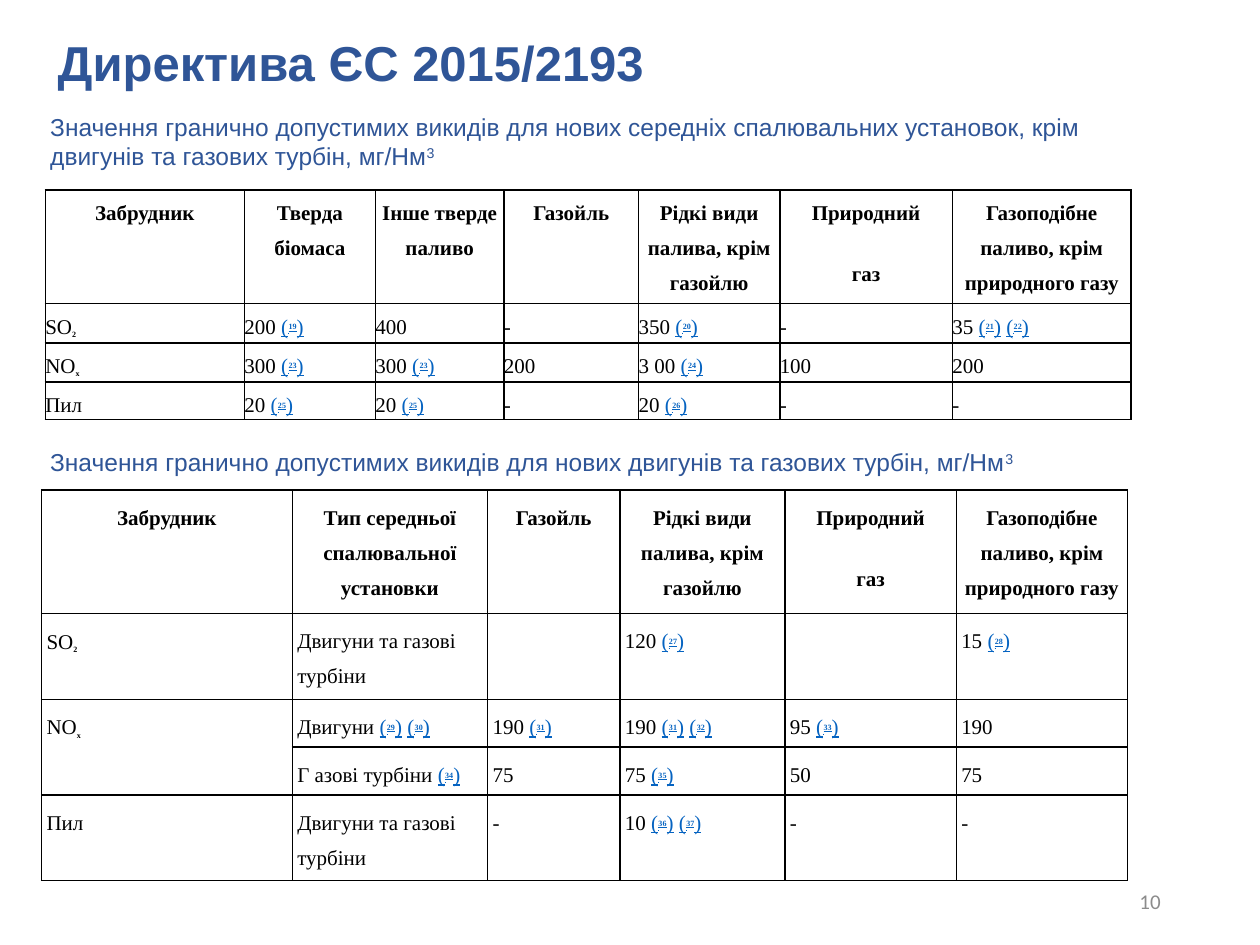
import pptx
import pptx.util
import pptx.dml.color
import pptx.enum.text
import pptx.oxml
import pptx.oxml.ns
from dataclasses import dataclass

Inches = pptx.util.Inches
Pt = pptx.util.Pt
Align = pptx.enum.text.PP_ALIGN
Anchor = pptx.enum.text.MSO_ANCHOR
NBSP = chr(160)


@dataclass(frozen=True)
class Theme:
    blue: str = "2F5597"
    link: str = "0563C1"
    ink: str = "000000"
    gray: str = "8C8C8C"
    sans: str = "Arial"
    serif: str = "Times New Roman"
    plain: str = "Calibri"
    title: int = 28
    lead: int = 14
    body: int = 12
    mark: int = 8
    dash: int = 1
    rule: int = 1


THEME = Theme()

# Cell text: "_" starts a subscript, "|" a footnote number, "\n" a paragraph
NEW = [
    ["Забрудник", "Тверда біомаса", "Інше тверде паливо", "Газойль",
     "Рідкі види палива, крім газойлю", "Природний\nгаз",
     "Газоподібне паливо, крім природного газу"],
    ["SO_2", "200|19", "400", "-", "350|20", "-", "35|21|22"],
    ["NO_x", "300|23", "300|23", "200", "3 00|24", "100", "200"],
    ["Пил", "20|25", "20|25", "-", "20|26", "-", "-"],
]
MOTORS = [
    ["Забрудник", "Тип середньої спалювальної установки", "Газойль",
     "Рідкі види палива, крім газойлю", "Природний\nгаз",
     "Газоподібне паливо, крім природного газу"],
    ["SO_2", "Двигуни та газові турбіни", "", "120|27", "", "15|28"],
    ["NO_x", "Двигуни|29|30", "190|31", "190|31|32", "95|33", "190"],
    ["", "Г азові турбіни|34", "75", "75|35", "50", "75"],
    ["Пил", "Двигуни та газові турбіни", "-", "10|36|37", "-", "-"],
]


def color(code):
    return pptx.dml.color.RGBColor.from_string(code)


def style(para, face, size, code, bold=False):
    font = para.font
    font.name, font.size, font.bold = face, Pt(size), bold
    font.color.rgb = color(code)


def add_run(para, text, size=None, bold=None, base=0, link=False):
    run = para.add_run()
    run.text = text
    if size:
        run.font.size = Pt(size)
    if bold:
        run.font.bold = True
    if link:
        run.font.underline = True
        run.font.color.rgb = color(THEME.link)
    if base:
        run._r.get_or_add_rPr().set("baseline", str(base * 1000))


def add_text(slide, box, text, face, size, code, bold=False, power="",
             align=Align.LEFT, anchor=Anchor.TOP):
    frame = slide.shapes.add_textbox(*map(Inches, box)).text_frame
    frame.word_wrap = True
    frame.vertical_anchor = anchor
    para = frame.paragraphs[0]
    para.alignment = align
    style(para, face, size, code, bold)
    add_run(para, text)
    if power:
        add_run(para, power, base=30)
    return para


def add_rules(cell):
    """Draw the four borders, which come before the fill in the cell."""
    props = cell._tc.get_or_add_tcPr()
    for spot, side in enumerate("LRTB"):
        props.insert(spot, pptx.oxml.parse_xml(
            f'<a:ln{side} {pptx.oxml.ns.nsdecls("a")} w="{Pt(THEME.rule)}">'
            f'<a:solidFill><a:srgbClr val="{THEME.ink}"/></a:solidFill>'
            f'</a:ln{side}>'))


def fill_para(para, text, head):
    style(para, THEME.serif, THEME.body, THEME.ink, head)
    para.alignment = Align.CENTER if head else Align.LEFT
    para.line_spacing = 1.5
    para.space_before = para.space_after = Pt(7.5)
    value, *notes = text.split("|")
    name, _, sub = value.partition("_")
    if name:
        add_run(para, name + (NBSP if notes else ""))
    if sub:
        add_run(para, sub, THEME.mark, True, -25)
    for count, note in enumerate(notes):
        if count:
            add_run(para, NBSP)
        add_run(para, "(", link=True)
        add_run(para, "-", THEME.dash, True, 30, True)
        add_run(para, note, THEME.mark, True, 30, True)
        add_run(para, ")", link=True)


def add_grid(slide, left, top, cols, rows, data, inset):
    box = (left, top, sum(cols), sum(rows))
    table = slide.shapes.add_table(
        len(rows), len(cols), *map(Inches, box)).table
    table.first_row = table.horz_banding = False
    for col, width in zip(table.columns, cols):
        col.width = Inches(width)
    for row, height, texts in zip(table.rows, rows, data):
        row.height = Inches(height)
        for cell, text in zip(row.cells, texts):
            cell.margin_left = cell.margin_right = Inches(inset)
            cell.margin_top = cell.margin_bottom = Inches(inset)
            cell.fill.background()
            add_rules(cell)
            frame = cell.text_frame
            for count, part in enumerate(text.split("\n")):
                para = frame.add_paragraph() if count else frame.paragraphs[0]
                fill_para(para, part, texts is data[0])
    return table


def add_head(slide, box):
    para = add_text(slide, box, "Директива ЄС 2015/2193", THEME.sans,
                    THEME.title, THEME.blue, True, anchor=Anchor.MIDDLE)
    para.line_spacing = 0.9


def add_lead(slide, box, text):
    add_text(slide, box, text, THEME.sans, THEME.lead, THEME.blue, power="3")


def add_new(slide, left, top):
    """Limits for new plants: lead text and table."""
    add_lead(slide, (left, top, 8.69, 0.81),
             "Значення гранично допустимих викидів для нових середніх "
             "спалювальних установок, крім двигунів та газових турбін, мг/Нм")
    add_grid(slide, left + 0.06, top + 0.67,
             [1.58, 1.04, 1.02, 1.07, 1.12, 1.37, 1.42],
             [0.9] + [0.3] * 3, NEW, 0)


def add_motors(slide, left, top):
    """Limits for motors and turbines: lead text and table."""
    add_lead(slide, (left, top, 8.5, 0.34),
             "Значення гранично допустимих викидів для нових двигунів "
             "та газових турбін, мг/Нм")
    table = add_grid(slide, left + 0.03, top + 0.39,
                     [1.99, 1.55, 1.05, 1.31, 1.36, 1.36],
                     [0.91, 0.63, 0.35, 0.35, 0.63], MOTORS, 0.04)
    table.cell(2, 0).merge(table.cell(3, 0))


def main():
    deck = pptx.Presentation()
    deck.slide_width, deck.slide_height = Inches(10), Inches(7.5)
    slide = deck.slides.add_slide(deck.slide_layouts[6])
    add_head(slide, (0.36, 0.27, 8.62, 0.5))
    add_new(slide, 0.3, 0.84)
    add_motors(slide, 0.3, 3.5)
    # Page number
    add_text(slide, (7.06, 6.95, 2.25, 0.4), "10", THEME.plain, THEME.body,
             THEME.gray, align=Align.RIGHT, anchor=Anchor.MIDDLE)
    deck.save("out.pptx")


if __name__ == "__main__":
    main()
